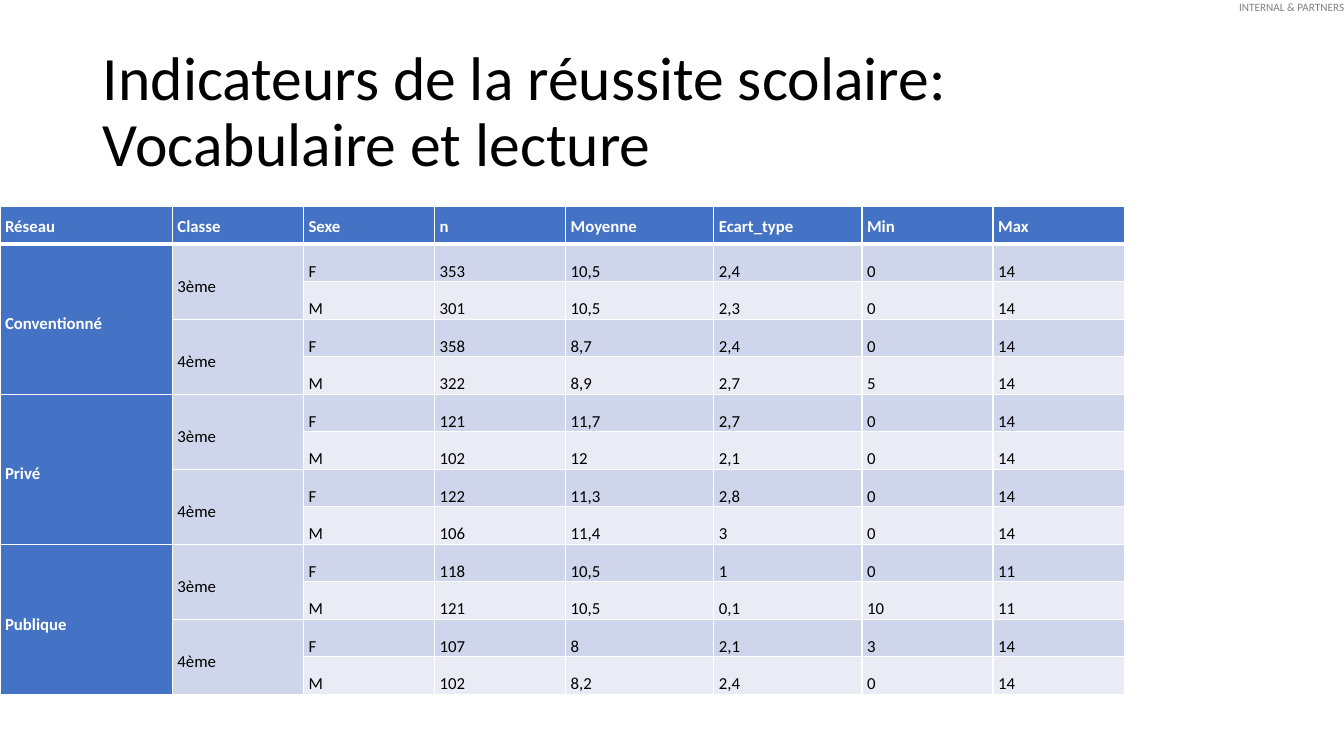
import dataclasses
import typing

import lxml.etree
import pptx
import pptx.dml.color
import pptx.enum.text
import pptx.oxml.ns
import pptx.util

PX = 9144
FONT = "Calibri"
HUES = {"blue": "4472C4", "band": "CFD5EA", "pale": "E9EBF5",
        "white": "FFFFFF", "black": "000000", "gray": "808080"}
ALIGN = pptx.enum.text.PP_ALIGN
ANCHOR = pptx.enum.text.MSO_ANCHOR
FIT = pptx.enum.text.MSO_AUTO_SIZE

HEADS = ("Réseau", "Classe", "Sexe", "n", "Moyenne", "Ecart_type", "Min", "Max")
WIDTHS = (171, 130, 130, 130, 147, 147, 130, 130)
NETS = ("Conventionné", "Privé", "Publique")
GRADES = ("3ème", "4ème")
SCORES = (
    ("F", "353", "10,5", "2,4", "0", "14"),
    ("M", "301", "10,5", "2,3", "0", "14"),
    ("F", "358", "8,7", "2,4", "0", "14"),
    ("M", "322", "8,9", "2,7", "5", "14"),
    ("F", "121", "11,7", "2,7", "0", "14"),
    ("M", "102", "12", "2,1", "0", "14"),
    ("F", "122", "11,3", "2,8", "0", "14"),
    ("M", "106", "11,4", "3", "0", "14"),
    ("F", "118", "10,5", "1", "0", "11"),
    ("M", "121", "10,5", "0,1", "10", "11"),
    ("F", "107", "8", "2,1", "3", "14"),
    ("M", "102", "8,2", "2,4", "0", "14"),
)
NET_SPAN = len(SCORES) // len(NETS)
GRADE_SPAN = NET_SPAN // len(GRADES)


@dataclasses.dataclass(frozen=True)
class Look:
    fill: str
    ink: str
    bold: bool
    anchor: typing.Any


HEAD = Look("blue", "white", True, ANCHOR.TOP)
NET = Look("blue", "white", True, ANCHOR.MIDDLE)
GRADE = Look("band", "black", False, ANCHOR.MIDDLE)
BANDS = (Look("band", "black", False, ANCHOR.BOTTOM),
         Look("pale", "black", False, ANCHOR.BOTTOM))


def px(size: int) -> int:
    return pptx.util.Emu(size * PX)


def hue(name: str) -> pptx.dml.color.RGBColor:
    return pptx.dml.color.RGBColor.from_string(HUES[name])


def apply(item: typing.Any, form: dict[str, typing.Any]) -> None:
    for key, value in form.items():
        setattr(item, key, value)


def write(frame: typing.Any, text: str, size: int, ink: str,
          bold: bool, form: dict[str, typing.Any]) -> None:
    line = frame.paragraphs[0]
    apply(line, form)
    run = line.add_run()
    run.text = text
    apply(run.font, {"name": FONT, "size": pptx.util.Pt(size), "bold": bold})
    run.font.color.rgb = hue(ink)


def edge(cell: typing.Any, row: int) -> None:
    props = cell._tc.get_or_add_tcPr()
    qn = pptx.oxml.ns.qn
    wide = {(0, "B"), (1, "T")}
    for side in "LRTB":
        points = 3 if (row, side) in wide else 1
        line = lxml.etree.SubElement(props, qn(f"a:ln{side}"),
                                     w=str(pptx.util.Pt(points)))
        fill = lxml.etree.SubElement(line, qn("a:solidFill"))
        lxml.etree.SubElement(fill, qn("a:srgbClr"), val=HUES["white"])


def put(cell: typing.Any, text: str, look: Look) -> None:
    apply(cell, {"vertical_anchor": look.anchor, "margin_left": px(5),
                 "margin_right": px(5), "margin_top": 0, "margin_bottom": 0})
    cell.fill.solid()
    cell.fill.fore_color.rgb = hue(look.fill)
    if text:
        write(cell.text_frame, text, 12, look.ink, look.bold,
              {"alignment": ALIGN.JUSTIFY, "line_spacing": 1.5,
               "space_after": pptx.util.Pt(8)})


def title(slide: typing.Any) -> None:
    head = slide.shapes.title
    apply(head, {"left": px(92), "top": px(40),
                 "width": px(1150), "height": px(145)})
    apply(head.text_frame, {"word_wrap": True, "auto_size": FIT.NONE,
                            "vertical_anchor": ANCHOR.MIDDLE})
    write(head.text_frame, "Indicateurs de la réussite scolaire: Vocabulaire et lecture",
          44, "black", False, {"alignment": ALIGN.LEFT, "line_spacing": 0.9})


def label(slide: typing.Any) -> None:
    box = slide.shapes.add_textbox(px(1229), 0, px(107), px(13))
    apply(box.text_frame, {"margin_left": 0, "margin_right": 0, "margin_top": 0,
                           "margin_bottom": 0, "word_wrap": False,
                           "auto_size": FIT.SHAPE_TO_FIT_TEXT})
    write(box.text_frame, "INTERNAL & PARTNERS", 8, "gray", False,
          {"alignment": ALIGN.LEFT})


def grid(slide: typing.Any) -> None:
    count = len(SCORES) + 1
    table = slide.shapes.add_table(count, len(HEADS), 0, px(205),
                                   px(sum(WIDTHS)), px(484)).table
    apply(table, {"first_row": True, "horz_banding": False})
    for col, width in zip(table.columns, WIDTHS):
        col.width = px(width)
    for row in range(count):
        for col in range(len(HEADS)):
            edge(table.cell(row, col), row)
    for col, text in enumerate(HEADS):
        put(table.cell(0, col), text, HEAD)
    for at, score in enumerate(SCORES):
        row = at + 1
        net = NETS[at // NET_SPAN] if at % NET_SPAN == 0 else ""
        grade = GRADES[at // GRADE_SPAN % len(GRADES)] if at % GRADE_SPAN == 0 else ""
        put(table.cell(row, 0), net, NET)
        put(table.cell(row, 1), grade, GRADE)
        for col, text in enumerate(score, 2):
            put(table.cell(row, col), text, BANDS[at % 2])
    for col, span in enumerate((NET_SPAN, GRADE_SPAN)):
        for row in range(1, count, span):
            table.cell(row, col).merge(table.cell(row + span - 1, col))


def main() -> None:
    deck = pptx.Presentation()
    apply(deck, {"slide_width": px(1333), "slide_height": px(750)})
    slide = deck.slides.add_slide(deck.slide_layouts[5])
    label(slide)
    title(slide)
    grid(slide)
    deck.save("out.pptx")


if __name__ == "__main__":
    main()
